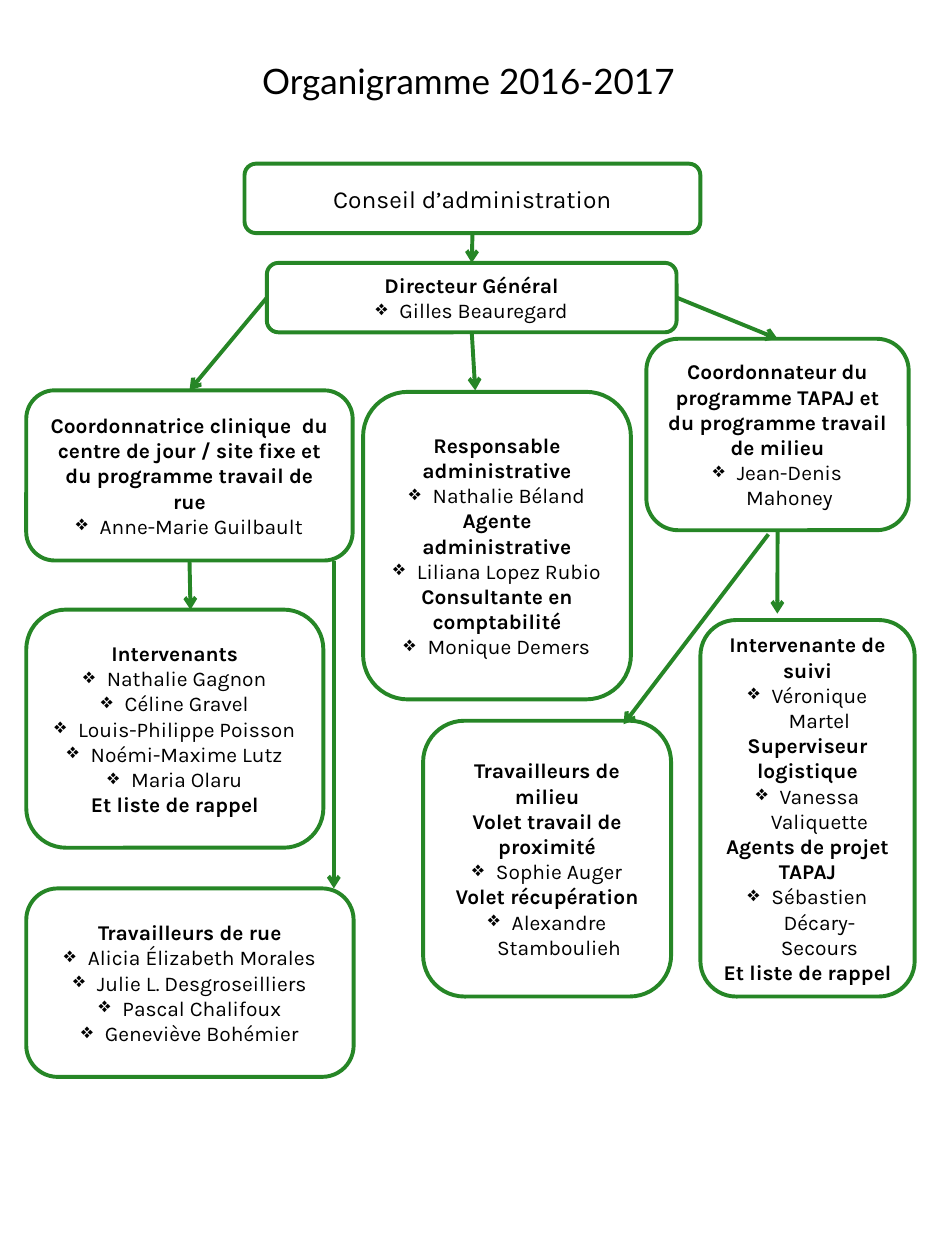
import pptx
import pptx.util
import pptx.dml.color
import pptx.enum.shapes
import pptx.enum.text
import pptx.oxml.ns
import lxml.etree

Cm = pptx.util.Cm
COLOURS = {"green": "268626", "white": "FFFFFF", "black": "000000"}
BULLET_INDENT = 0.48
LINE_WIDTH = 2.25

TITLE = "Organigramme 2016-2017"

# Name: ((left, top, width, height) in cm, [(heading, names), ...])
BOXES = {
    "board": ((4.93, 3.3, 9.19, 1.4), [("Conseil d’administration", [])]),
    "director": ((5.38, 5.3, 8.26, 1.4), [("Directeur Général", ["Gilles Beauregard"])]),
    "office": ((7.32, 7.9, 5.4, 6.2), [
        ("Responsable administrative", ["Nathalie Béland"]),
        ("Agente administrative", ["Liliana Lopez Rubio"]),
        ("Consultante en comptabilité", ["Monique Demers"]),
    ]),
    "clinic": ((0.53, 7.87, 6.58, 3.43), [
        ("Coordonnatrice clinique  du centre de jour / site fixe et du programme "
         "travail de rue", ["Anne-Marie Guilbault"]),
    ]),
    "programme": ((13.03, 6.83, 5.29, 3.86), [
        ("Coordonnateur du programme TAPAJ et du programme travail de milieu",
         ["Jean-Denis Mahoney"]),
    ]),
    "support": ((0.53, 12.29, 5.99, 4.8), [
        ("Intervenants", ["Nathalie Gagnon", "Céline Gravel", "Louis-Philippe Poisson",
                          "Noémi-Maxime Lutz", "Maria Olaru"]),
        ("Et liste de rappel", []),
    ]),
    "street": ((0.53, 17.91, 6.6, 3.8), [
        ("Travailleurs de rue", ["Alicia Élizabeth Morales", "Julie L. Desgroseilliers",
                                 "Pascal Chalifoux", "Geneviève Bohémier"]),
    ]),
    "community": ((8.53, 14.53, 5, 5.56), [
        ("Travailleurs de milieu", []),
        ("Volet travail de proximité", ["Sophie Auger"]),
        ("Volet récupération", ["Alexandre Stamboulieh"]),
    ]),
    "follow_up": ((14.12, 12.5, 4.32, 7.59), [
        ("Intervenante de suivi", ["Véronique Martel"]),
        ("Superviseur logistique", ["Vanessa Valiquette"]),
        ("Agents de projet TAPAJ", ["Sébastien Décary-Secours"]),
        ("Et liste de rappel", []),
    ]),
}

TOP, LEFT, BOTTOM, RIGHT = range(4)
# Each end is (box name, side) or a free point in cm.
ARROWS = [
    (("board", BOTTOM), ("director", TOP)),
    (("director", BOTTOM), (9.58, 7.87)),
    (("director", LEFT), ("clinic", TOP)),
    (("director", RIGHT), ("programme", TOP)),
    (("clinic", BOTTOM), (3.84, 12.29)),
    ((6.73, 11.3), (6.73, 17.91)),
    (("programme", BOTTOM), (15.67, 12.37)),
    ((15.49, 10.77), (12.57, 14.6)),
]


def rgb(name):
    return pptx.dml.color.RGBColor.from_string(COLOURS[name])


def add_child(parent, tag, **attributes):
    return lxml.etree.SubElement(parent, pptx.oxml.ns.qn(tag), attributes)


def write(para, text, size=12, bold=False, font="Karla", bullet=None):
    para.alignment = pptx.enum.text.PP_ALIGN.CENTER
    if bullet:
        properties = para._p.get_or_add_pPr()
        properties.set("marL", str(Cm(BULLET_INDENT)))
        properties.set("indent", str(-Cm(BULLET_INDENT)))
        add_child(properties, "a:buChar", char=bullet)
    span = para.add_run()
    span.text = text
    span.font.name = font
    span.font.size = pptx.util.Pt(size)
    span.font.bold = bold
    span.font.color.rgb = rgb("black")


def style_line(line):
    line.color.rgb = rgb("green")
    line.width = pptx.util.Pt(LINE_WIDTH)


def add_box(page, name, place, groups):
    box = page.shapes.add_shape(pptx.enum.shapes.MSO_SHAPE.ROUNDED_RECTANGLE, *map(Cm, place))
    box.shadow.inherit = False
    box.fill.solid()
    box.fill.fore_color.rgb = rgb("white")
    style_line(box.line)
    frame = box.text_frame
    frame.word_wrap = True
    frame.vertical_anchor = pptx.enum.text.MSO_ANCHOR.MIDDLE
    heading_format = {"size": 14} if name == "board" else {"bold": True}
    lines = []
    for heading, people in groups:
        lines.append((heading, heading_format))
        lines += [(person, {"bullet": "❖"}) for person in people]
    for index, (text, text_format) in enumerate(lines):
        para = frame.add_paragraph() if index else frame.paragraphs[0]
        write(para, text, **text_format)
    return box


def add_arrow(page, boxes, start, end):
    points = [(0, 0) if isinstance(spot[0], str) else spot for spot in (start, end)]
    arrow = page.shapes.add_connector(
        pptx.enum.shapes.MSO_CONNECTOR.STRAIGHT, *(Cm(value) for point in points for value in point))
    for spot, connect in ((start, arrow.begin_connect), (end, arrow.end_connect)):
        if isinstance(spot[0], str):
            connect(boxes[spot[0]], spot[1])
    style_line(arrow.line)
    add_child(arrow.line._get_or_add_ln(), "a:tailEnd", type="arrow")
    add_child(arrow._element.spPr, "a:effectLst")


def main():
    deck = pptx.Presentation()
    deck.slide_width, deck.slide_height = Cm(19.05), Cm(25.4)
    page = deck.slides.add_slide(deck.slide_layouts[5])

    title = page.shapes.title
    title.left, title.top, title.width, title.height = map(Cm, (-0.08, 1.07, 19.05, 1.12))
    title.text_frame.vertical_anchor = pptx.enum.text.MSO_ANCHOR.MIDDLE
    write(title.text_frame.paragraphs[0], TITLE, size=20, font="Lato")

    boxes = {name: add_box(page, name, *content) for name, content in BOXES.items()}
    for start, end in ARROWS:
        add_arrow(page, boxes, start, end)
    deck.save("out.pptx")


if __name__ == "__main__":
    main()
